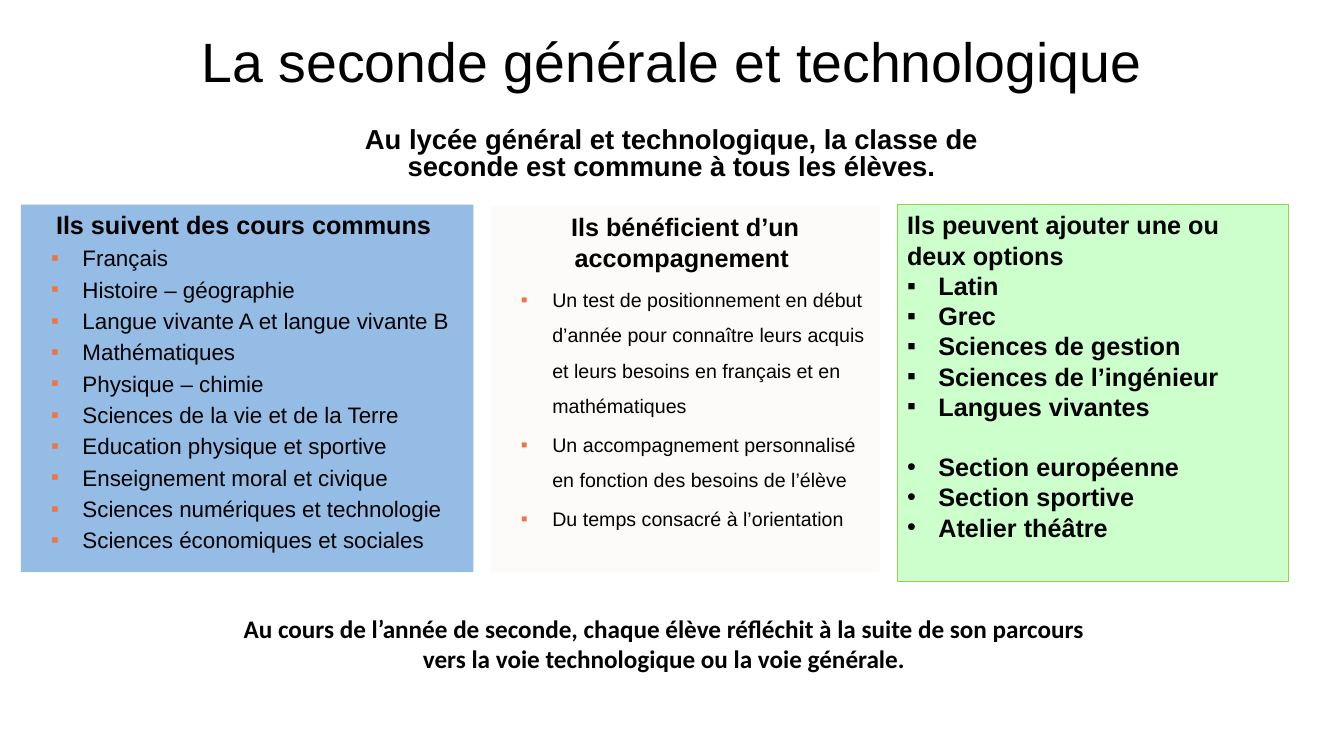
from lxml.etree import SubElement as Sub
from pptx import Presentation
from pptx.dml.color import RGBColor
from pptx.enum.shapes import MSO_SHAPE as Kind
from pptx.enum.text import MSO_ANCHOR as Anchor, MSO_AUTO_SIZE as Auto, PP_ALIGN as Align
from pptx.oxml.ns import qn
from pptx.util import Cm, Pt

TITLE = "La seconde générale et technologique"
INTRO = "Au lycée général et technologique, la classe de seconde est commune à tous les élèves."
CLOSE = ("Au cours de l’année de seconde, chaque élève réfléchit à la suite de son parcours "
         "vers la voie technologique ou la voie générale.")
COURSES = [
    "Français",
    "Histoire – géographie",
    "Langue vivante A et langue vivante B",
    "Mathématiques",
    "Physique – chimie",
    "Sciences de la vie et de la Terre",
    "Education physique et sportive",
    "Enseignement moral et civique",
    "Sciences numériques et technologie",
    "Sciences économiques et sociales",
]
HELP = [
    "Un test de positionnement en début d’année pour connaître leurs acquis "
    "et leurs besoins en français et en mathématiques",
    "Un accompagnement personnalisé en fonction des besoins de l’élève",
    "Du temps consacré à l’orientation",
]
OPTIONS = ["Latin", "Grec", "Sciences de gestion", "Sciences de l’ingénieur", "Langues vivantes"]
EXTRAS = ["Section européenne", "Section sportive", "Atelier théâtre"]

ORANGE = "EE7444"
HANG = 0.79
DEEP = 1.3
BASIC = dict(bold=True, size=18)
PANELS = [
    dict(area=(0.53, 5.16, 11.4, 9.25), fill="95BCE5", edge=None,
         head="Ils suivent des cours communs ", align=Align.CENTER,
         lists=[(COURSES, dict(size=16, mark="▪", tint=ORANGE, left=DEEP, level=1, before=3.2))]),
    dict(area=(12.37, 5.21, 9.8, 9.22), fill="FCFBF9", edge=None,
         head="Ils bénéficient d’un accompagnement ", align=Align.CENTER,
         lists=[(HELP, dict(size=14, mark="▪", tint=ORANGE, left=DEEP, level=1,
                            before=2.8, line=1.5))]),
    dict(area=(22.61, 5.16, 9.86, 9.5), fill="CCFFCC", edge="92D050",
         head="Ils peuvent ajouter une ou deux options", align=Align.LEFT,
         lists=[(OPTIONS, dict(BASIC, mark="▪", left=HANG)),
                (EXTRAS, dict(BASIC, mark="•", left=HANG, gap=21.5))]),
]


def color(code):
    return RGBColor.from_string(code)


def place(shape, area):
    shape.left, shape.top, shape.width, shape.height = map(Cm, area)


def frame(shape, anchor=Anchor.TOP):
    box = shape.text_frame
    box.auto_size = Auto.NONE
    box.word_wrap = True
    box.vertical_anchor = anchor
    return box


def write(box, text, size=18, bold=False, face="Arial", align=Align.LEFT, line=1.0,
          before=0, mark=None, tint="000000", left=0, level=0):
    first = not box.paragraphs[0].runs
    para = box.paragraphs[0] if first else box.add_paragraph()
    para.level = level
    props = para._p.get_or_add_pPr()
    props.set("marL", str(Cm(left)))
    props.set("indent", str(-Cm(HANG) if mark else 0))
    if mark:
        Sub(Sub(props, qn("a:buClr")), qn("a:srgbClr"), val=tint)
        Sub(props, qn("a:buFont"), typeface="Arial")
        Sub(props, qn("a:buChar"), char=mark)
    else:
        Sub(props, qn("a:buNone"))
    para.alignment = align
    para.line_spacing = line
    para.space_before = Pt(0 if first else before)
    run = para.add_run()
    run.text = text
    font = run.font
    font.name, font.size, font.bold = face, Pt(size), bold
    font.color.rgb = color("000000")


def panel(slide, area, fill, edge, head, align, lists):
    rect = slide.shapes.add_shape(Kind.RECTANGLE, *map(Cm, area))
    rect.shadow.inherit = False
    rect.fill.solid()
    rect.fill.fore_color.rgb = color(fill)
    if edge:
        rect.line.color.rgb = color(edge)
        rect.line.width = Pt(0.75)
    else:
        rect.line.fill.background()
    box = frame(rect)
    write(box, head, align=align, **BASIC)
    for items, style in lists:
        style = dict(style)
        gap = style.pop("gap", 0)
        for pos, item in enumerate(items):
            extra = {"before": gap} if gap and pos == 0 else {}
            write(box, item, **{**style, **extra})


def main():
    deck = Presentation()
    deck.slide_width, deck.slide_height = Cm(33.87), Cm(19.05)
    slide = deck.slides.add_slide(deck.slide_layouts[1])

    title, intro = slide.placeholders
    place(title, (4.83, 0.36, 26.01, 2.54))
    write(frame(title, Anchor.MIDDLE), TITLE, size=39.6, line=0.9)
    place(intro, (8.53, 3.12, 16.79, 1.78))
    write(frame(intro), INTRO, size=19.6, bold=True, align=Align.CENTER, line=0.8)

    for data in PANELS:
        panel(slide, **data)

    close = slide.shapes.add_textbox(*map(Cm, (5.33, 15.32, 22.81, 1.8)))
    write(frame(close), CLOSE, face="Calibri", align=Align.CENTER, **BASIC)
    deck.save("out.pptx")


if __name__ == "__main__":
    main()
